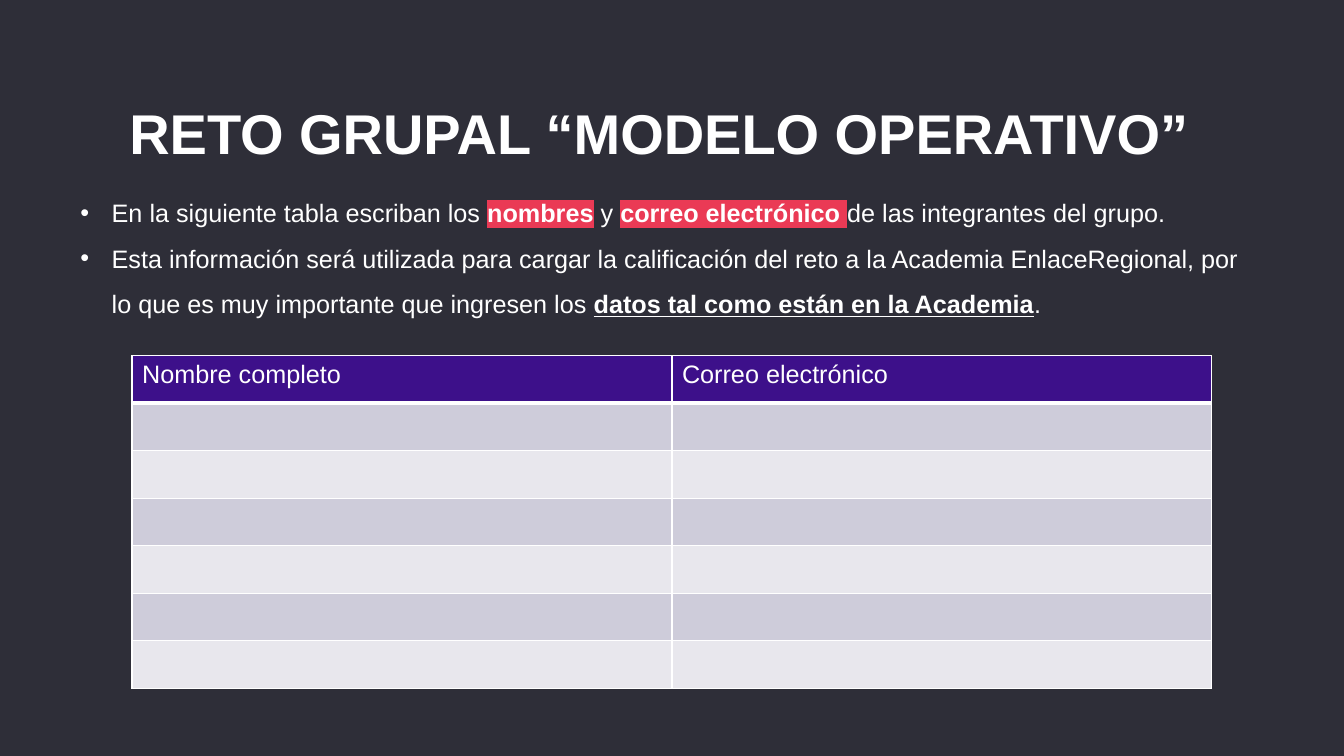
import pptx
import pptx.util
import pptx.dml.color
import pptx.enum.text
import pptx.oxml.ns
from lxml import etree

Inches = pptx.util.Inches
Pt = pptx.util.Pt
RGB = pptx.dml.color.RGBColor.from_string
qn = pptx.oxml.ns.qn

FONT = "Arial"
COLORS = {
    "back": "2E2E38",
    "text": "FFFFFF",
    "mark": "EA3A55",
    "head": "3D108A",
    "odd": "CECCDA",
    "even": "E8E7ED",
}
HEADS = ["Nombre completo", "Correo electrónico"]
ROWS = 7
POINTS = [
    [
        ("En la siguiente tabla escriban los ", {}),
        ("nombres", {"bold": True, "mark": "mark"}),
        (" y ", {}),
        ("correo electrónico ", {"bold": True, "mark": "mark"}),
        ("de las integrantes del grupo.", {}),
    ],
    [
        ("Esta información será utilizada para cargar la calificación del reto "
         "a la Academia EnlaceRegional, por lo que es muy importante que "
         "ingresen los ", {}),
        ("datos tal como están en la Academia", {"bold": True, "under": True}),
        (".", {}),
    ],
]


def add_color(parent, name):
    etree.SubElement(parent, qn("a:srgbClr"), val=COLORS[name])


def add_text(para, text, size=18, bold=False, under=False, mark=None):
    run = para.add_run()
    run.text = text
    font = run.font
    font.size = Pt(size)
    font.bold = bold
    font.underline = under
    font.color.rgb = RGB(COLORS["text"])
    if mark:
        light = etree.Element(qn("a:highlight"))
        add_color(light, mark)
        run._r.get_or_add_rPr().find(qn("a:solidFill")).addnext(light)
    font.name = FONT


def add_box(slide, left, top, width, height):
    box = slide.shapes.add_textbox(
        Inches(left), Inches(top), Inches(width), Inches(height))
    frame = box.text_frame
    frame.word_wrap = True
    frame.auto_size = pptx.enum.text.MSO_AUTO_SIZE.SHAPE_TO_FIT_TEXT
    return frame


def add_title(slide, text):
    para = add_box(slide, 0.61, 0.59, 11.85, 0.99).paragraphs[0]
    para.alignment = pptx.enum.text.PP_ALIGN.CENTER
    para.line_spacing = 1.5
    add_text(para, text, size=40, bold=True)


def add_points(slide, points):
    frame = add_box(slide, 0.7, 1.76, 11.76, 1.41)
    for i, runs in enumerate(points):
        para = frame.add_paragraph() if i else frame.paragraphs[0]
        para.line_spacing = 1.5
        props = para._p.get_or_add_pPr()
        props.set("marL", str(Inches(0.31)))
        props.set("indent", str(Inches(-0.31)))
        etree.SubElement(props, qn("a:buFont"), typeface=FONT)
        etree.SubElement(props, qn("a:buChar"), char="•")
        for text, style in runs:
            add_text(para, text, **style)


def style_cell(cell, fill, base=1):
    props = cell._tc.get_or_add_tcPr()
    for side, width in (("L", 1), ("R", 1), ("T", 1), ("B", base)):
        line = etree.SubElement(props, qn(f"a:ln{side}"), w=str(Pt(width)))
        add_color(etree.SubElement(line, qn("a:solidFill")), "text")
    cell.fill.solid()
    cell.fill.fore_color.rgb = RGB(COLORS[fill])


def add_grid(slide, heads):
    table = slide.shapes.add_table(
        ROWS, len(heads), Inches(1.31), Inches(3.53),
        Inches(10.71), Inches(3.3)).table
    table.first_row = False
    table.horz_banding = False
    for col, text in enumerate(heads):
        head = table.cell(0, col)
        style_cell(head, "head", base=3)
        add_text(head.text_frame.paragraphs[0], text)
        for row in range(1, ROWS):
            style_cell(table.cell(row, col), "odd" if row % 2 else "even")


def main():
    deck = pptx.Presentation()
    deck.slide_width = Inches(13.33)
    deck.slide_height = Inches(7.5)
    slide = deck.slides.add_slide(deck.slide_layouts[6])
    back = slide.background.fill
    back.solid()
    back.fore_color.rgb = RGB(COLORS["back"])
    add_title(slide, "RETO GRUPAL “MODELO OPERATIVO”")
    add_grid(slide, HEADS)
    add_points(slide, POINTS)
    deck.save("out.pptx")


if __name__ == "__main__":
    main()
